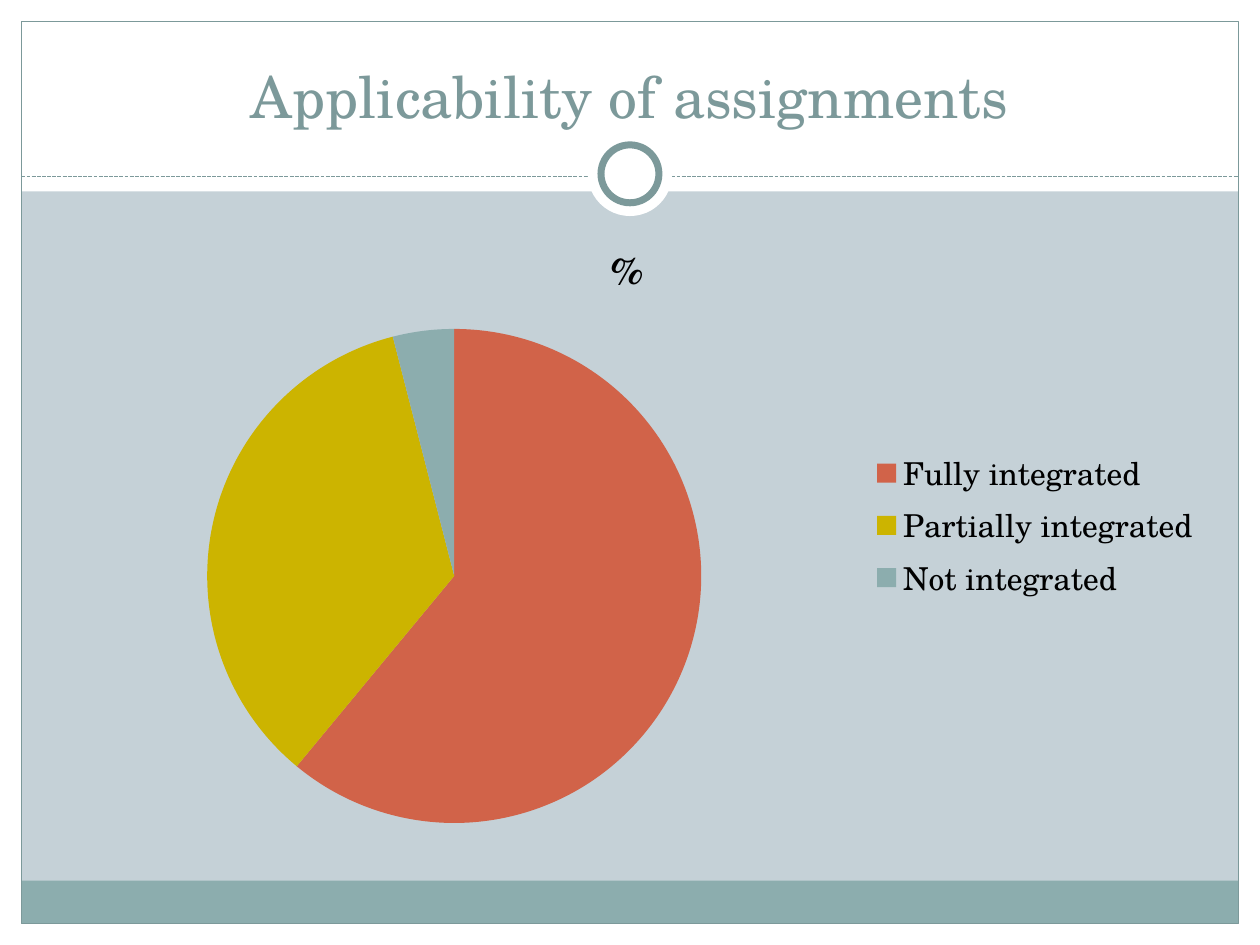
from lxml.etree import SubElement as Sub
from pptx import Presentation
from pptx.chart.data import CategoryChartData as Data
from pptx.dml.color import RGBColor
from pptx.enum.chart import XL_CHART_TYPE as Kind, XL_LEGEND_POSITION as Side
from pptx.enum.dml import MSO_LINE as Dash
from pptx.enum.shapes import MSO_CONNECTOR as Link, MSO_SHAPE as Form
from pptx.enum.text import MSO_ANCHOR as Anchor, PP_ALIGN as Align
from pptx.oxml.ns import qn
from pptx.util import Inches, Pt

WHITE = RGBColor(0xFF, 0xFF, 0xFF)
BLACK = RGBColor(0, 0, 0)
MIST = RGBColor(0xC5, 0xD1, 0xD7)
TEAL = RGBColor(0x7C, 0x99, 0x9A)
SAGE = RGBColor(0x8C, 0xAD, 0xAE)
RUST = RGBColor(0xD1, 0x63, 0x49)
GOLD = RGBColor(0xCC, 0xB4, 0x00)
FACE = "TeX Gyre Schola"
WIDE, HIGH, EDGE, HEAD = 10, 7.5, 0.17, 1.52


def style(font, size, color, bold=False):
    font.name, font.size, font.bold = FACE, Pt(size), bold
    font.color.rgb = color


def write(frame, text, size=18, color=BLACK, bold=False, align=Align.CENTER):
    part = frame.paragraphs[0]
    part.alignment = align
    run = part.add_run()
    run.text = text
    style(run.font, size, color, bold)


class Page:
    def __init__(self, deck, back):
        self.slide = deck.slides.add_slide(deck.slide_layouts[5])
        self.shapes = self.slide.shapes
        fill = self.slide.background.fill
        fill.solid()
        fill.fore_color.rgb = back

    def block(self, x, y, w, h, fill=None, line=None, weight=0.75, form=Form.RECTANGLE):
        item = self.shapes.add_shape(form, Inches(x), Inches(y), Inches(w), Inches(h))
        item.shadow.inherit = False
        if fill is None:
            item.fill.background()
        else:
            item.fill.solid()
            item.fill.fore_color.rgb = fill
        if line is None:
            item.line.fill.background()
        else:
            item.line.color.rgb = line
            item.line.width = Pt(weight)

    def disc(self, x, y, size, **look):
        self.block(x - size / 2, y - size / 2, size, size, form=Form.OVAL, **look)

    def rule(self, x, y, end, color):
        item = self.shapes.add_connector(
            Link.STRAIGHT, Inches(x), Inches(y), Inches(end), Inches(y))
        item.line.color.rgb = color
        item.line.width = Pt(0.75)
        item.line.dash_style = Dash.SQUARE_DOT
        Sub(item.element.spPr, qn("a:effectLst"))

    def title(self, text, x, y, w, h):
        item = self.shapes.title
        item.left, item.top = Inches(x), Inches(y)
        item.width, item.height = Inches(w), Inches(h)
        frame = item.text_frame
        frame.word_wrap = True
        frame.vertical_anchor = Anchor.BOTTOM
        write(frame, text, size=33, color=TEAL)
        self.shapes.element.append(item.element)

    def pie(self, name, parts, x, y, w, h):
        data = Data()
        data.categories = [part[0] for part in parts]
        data.add_series(name, [part[1] for part in parts])
        chart = self.shapes.add_chart(
            Kind.PIE, Inches(x), Inches(y), Inches(w), Inches(h), data).chart
        style(chart.font, 18, BLACK)
        chart.has_title = True
        write(chart.chart_title.text_frame, name, size=21.6, bold=True)
        chart.chart_title.include_in_layout = False
        chart.has_legend = True
        chart.legend.position = Side.RIGHT
        chart.legend.include_in_layout = False
        plot = chart.plots[0]
        plot.vary_by_categories = True
        for i, part in enumerate(parts):
            fill = plot.series[0].points[i].format.fill
            fill.solid()
            fill.fore_color.rgb = part[2]


def main():
    deck = Presentation()
    deck.slide_width, deck.slide_height = Inches(WIDE), Inches(HIGH)
    page = Page(deck, MIST)
    span, tall = WIDE - 2 * EDGE, HIGH - 2 * EDGE
    for box in (
        (0, HIGH - EDGE, WIDE, EDGE),
        (0, 0, WIDE, HEAD),
        (0, 0, EDGE, HIGH),
        (WIDE - EDGE, 0, EDGE, HIGH),
    ):
        page.block(*box, fill=WHITE)
    page.block(EDGE, 6.99, span, 0.34, fill=SAGE)
    page.block(EDGE, EDGE, span, tall, line=TEAL)
    page.rule(EDGE, 1.4, WIDE - EDGE, TEAL)
    page.disc(WIDE / 2, 1.38, 0.67, fill=WHITE)
    page.disc(WIDE / 2, 1.38, 0.46, fill=WHITE, line=TEAL, weight=4)
    page.title("Applicability of assignments", 0.33, 0.25, 9.33, 0.83)
    parts = [
        ("Fully integrated", 61, RUST),
        ("Partially integrated", 35, GOLD),
        ("Not integrated", 4, SAGE),
    ]
    page.pie("%", parts, 0.33, 1.67, 9.3, 5)
    deck.save("out.pptx")


if __name__ == "__main__":
    main()
